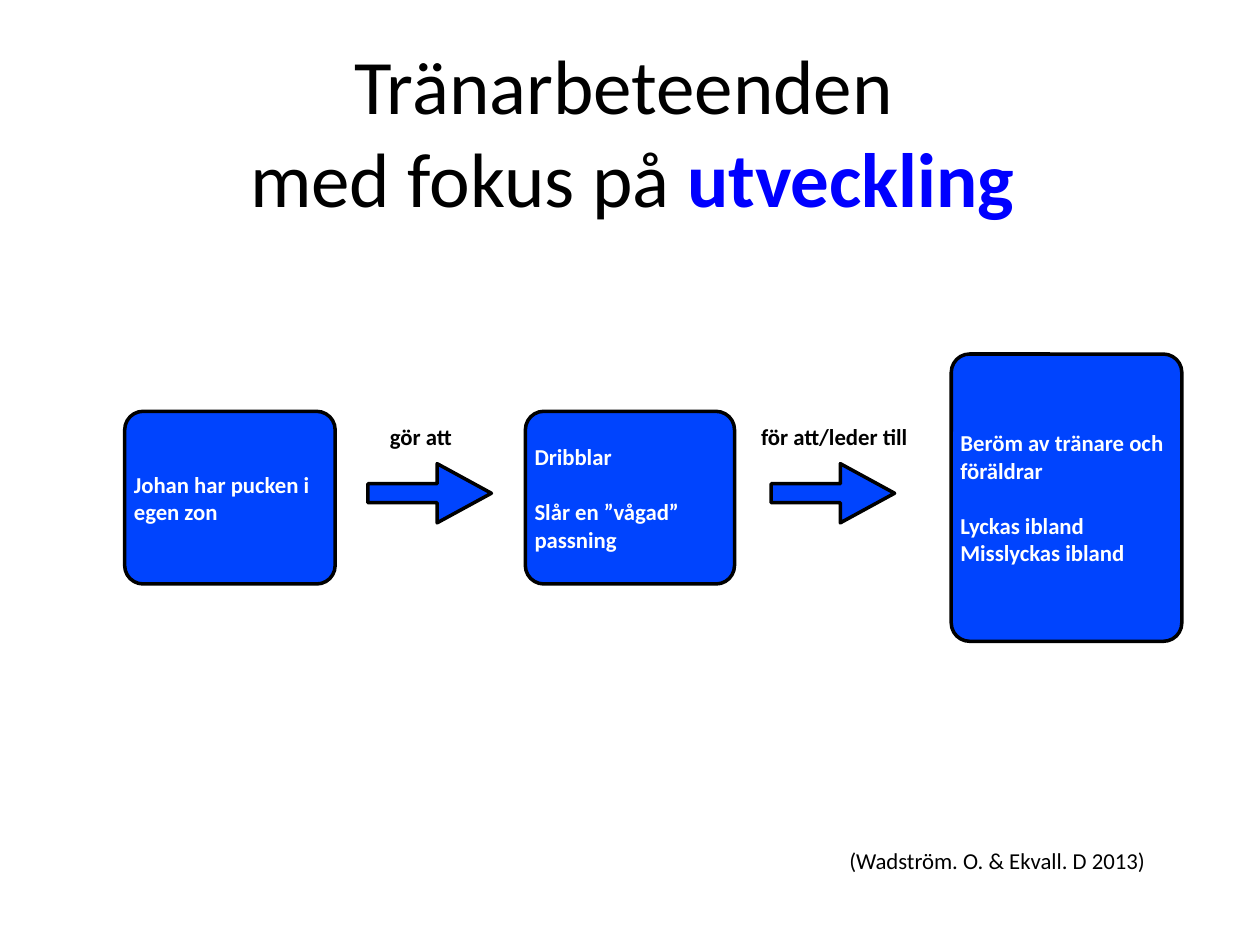
from pptx import Presentation
from pptx.dml.color import RGBColor
from pptx.enum.shapes import MSO_SHAPE
from pptx.enum.text import MSO_ANCHOR, PP_ALIGN
from pptx.util import Inches, Pt

BLACK = RGBColor(0, 0, 0)
WHITE = RGBColor(255, 255, 255)
ACCENT = RGBColor(0, 0, 255)
BLUE = RGBColor(0, 0x44, 0xFE)
FONT = "Calibri"
BODY_SIZE = 13
GAP = Pt(16)  # one empty line between groups of lines

# The grid has 100 columns and 75 rows
WIDTH, HEIGHT = Inches(10), Inches(7.5)
COLUMN, ROW = WIDTH / 100, HEIGHT / 75
MIDDLE = 39.5  # row that the chain of steps is centred on
CORNER = 1.46  # corner radius of a step, in rows


def grid(left, top, width, height):
    return (round(left * COLUMN), round(top * ROW),
            round(width * COLUMN), round(height * ROW))


def style(span, size, color, bold=False):
    span.font.name = FONT
    span.font.size = Pt(size)
    span.font.color.rgb = color
    span.font.bold = bold


def set_insets(frame, left=0, top=0, right=0, bottom=0):
    frame.margin_left, frame.margin_top = Inches(left), Inches(top)
    frame.margin_right, frame.margin_bottom = Inches(right), Inches(bottom)


def add_title(page, box):
    frame = page.shapes.add_textbox(*box).text_frame
    frame.word_wrap = True
    frame.vertical_anchor = MSO_ANCHOR.MIDDLE
    set_insets(frame, 0.05, 0.04, 0.05, 0.04)
    para = frame.paragraphs[0]
    para.text = "Tränarbeteenden \vmed fokus på "
    para.alignment = PP_ALIGN.CENTER
    for span in para.runs:
        style(span, 44, BLACK)
    word = para.add_run()
    word.text = "utveckling"
    style(word, 44, ACCENT, bold=True)


def add_label(page, box, text, align=PP_ALIGN.CENTER, bold=True):
    frame = page.shapes.add_textbox(*box).text_frame
    frame.text = text
    frame.word_wrap = False
    frame.vertical_anchor = MSO_ANCHOR.MIDDLE
    set_insets(frame)
    para = frame.paragraphs[0]
    para.alignment = align
    style(para.runs[0], BODY_SIZE, BLACK, bold)


def add_blue_shape(page, kind, box):
    shape = page.shapes.add_shape(kind, *box)
    shape.shadow.inherit = False
    shape.fill.solid()
    shape.fill.fore_color.rgb = BLUE
    shape.line.color.rgb = BLACK
    shape.line.width = Pt(2)
    return shape


def add_step(page, left, width, height, groups):
    """A rounded box on the middle row, with a gap between groups of lines."""
    box = grid(left, MIDDLE - height / 2, width, height)
    shape = add_blue_shape(page, MSO_SHAPE.ROUNDED_RECTANGLE, box)
    shape.adjustments[0] = CORNER / min(width, height)
    frame = shape.text_frame
    frame.word_wrap = True
    frame.vertical_anchor = MSO_ANCHOR.MIDDLE
    set_insets(frame, left=0.03, right=0.03)
    frame.text = "\n".join(line for group in groups for line in group)
    for para in frame.paragraphs:
        para.alignment = PP_ALIGN.LEFT
        style(para.runs[0], BODY_SIZE, WHITE, bold=True)
    start = 0
    for group in groups[:-1]:
        start += len(group)
        frame.paragraphs[start].space_before = GAP


def add_link(page, left, label_left, label_width, text):
    """An arrow with its label above."""
    arrow = add_blue_shape(page, MSO_SHAPE.RIGHT_ARROW, grid(left, 36.8, 9.8, 4.7))
    arrow.adjustments[0] = 0.32
    arrow.adjustments[1] = 0.917
    add_label(page, grid(label_left, 33.5, label_width, 2.2), text)


def main():
    deck = Presentation()
    deck.slide_width, deck.slide_height = WIDTH, HEIGHT
    page = deck.slides.add_slide(deck.slide_layouts[6])

    add_title(page, grid(6.9, 4, 86.6, 12.7))

    # Chain: situation, behaviour, consequence
    add_step(page, 9.9, 16.7, 13.7, [["Johan har pucken i egen zon"]])
    add_link(page, 29.2, 30.9, 5, "gör att")
    add_step(page, 41.7, 16.6, 13.7, [["Dribblar"], ["Slår en ”vågad” passning"]])
    add_link(page, 61.2, 60.3, 11.8, "för att/leder till")
    add_step(page, 75.5, 18.3, 22.8, [
        ["Beröm av tränare och föräldrar"],
        ["Lyckas ibland", "Misslyckas ibland"],
    ])

    # Citation
    add_label(page, grid(67.4, 67.2, 23.9, 2.2),
              "(Wadström. O. & Ekvall. D 2013)", PP_ALIGN.LEFT, bold=False)

    deck.save("out.pptx")


if __name__ == "__main__":
    main()
